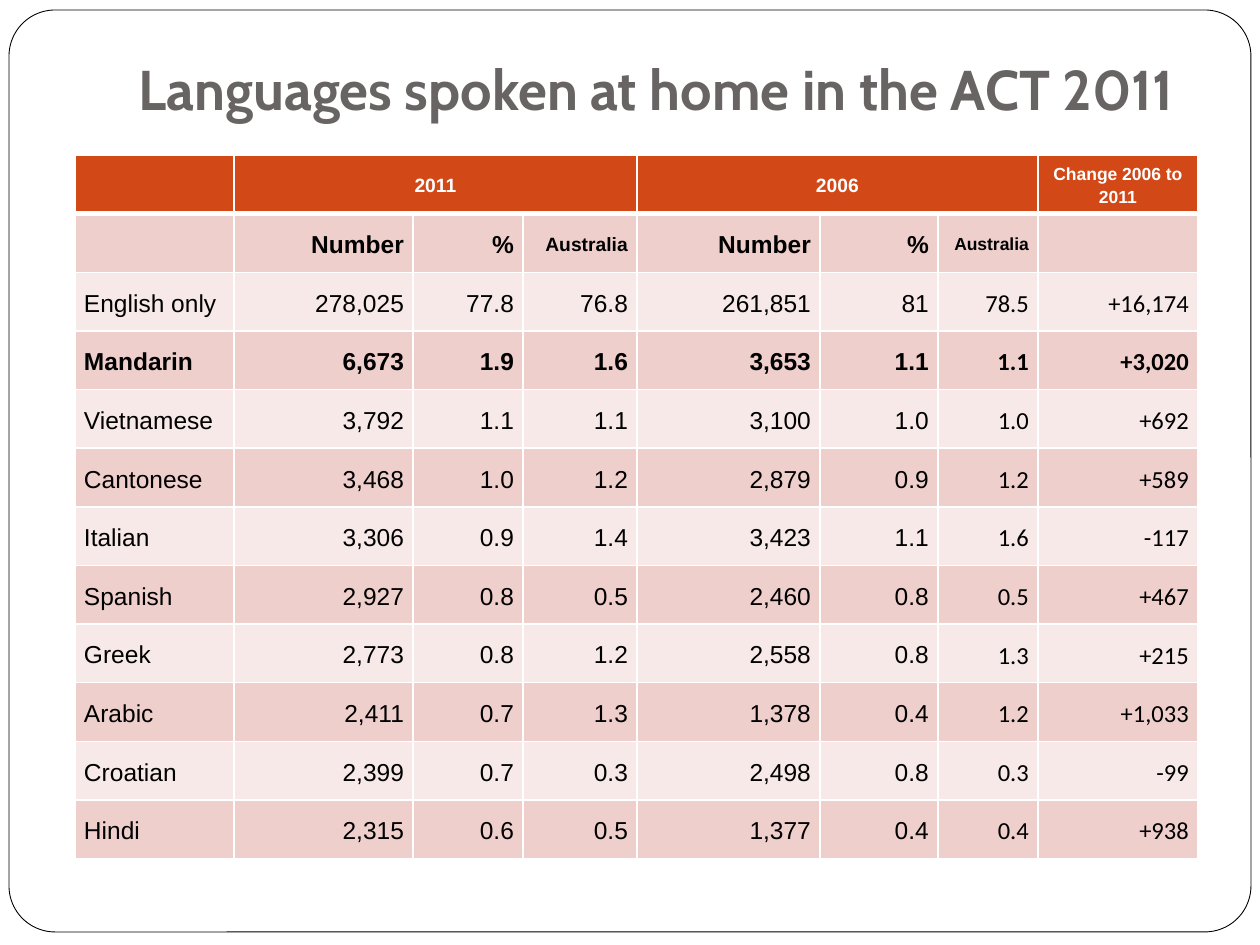
from typing import NamedTuple

from lxml.etree import SubElement
from pptx import Presentation
from pptx.dml.color import RGBColor
from pptx.enum.shapes import MSO_SHAPE as Shape
from pptx.enum.text import MSO_ANCHOR as Anchor, PP_ALIGN as Align
from pptx.oxml.ns import qn
from pptx.util import Emu, Pt

EMU_PER_PX = 914400 // 126

WHITE = RGBColor(0xFF, 0xFF, 0xFF)
BLACK = RGBColor(0x00, 0x00, 0x00)
TITLE_GREY = RGBColor(0x69, 0x64, 0x64)
HEADER_ORANGE = RGBColor(0xD3, 0x48, 0x17)
BAND_DARK = RGBColor(0xEF, 0xCF, 0xCC)
BAND_LIGHT = RGBColor(0xF7, 0xE9, 0xE8)

COLUMN_WIDTHS = (159, 179, 110, 114, 183, 118, 100, 160)
TABLE_HEIGHT = 704
HIGHLIGHTED = "Mandarin"


class Language(NamedTuple):
    name: str
    number_2011: str
    percent_2011: str
    australia_2011: str
    number_2006: str
    percent_2006: str
    australia_2006: str
    change: str


class CellStyle(NamedTuple):
    fill: RGBColor
    color: RGBColor = BLACK
    size: int = 14
    bold: bool = False
    font: str = "Arial"
    align: Align = Align.RIGHT
    top: int = 1
    bottom: int = 1


LANGUAGES = (
    Language("English only", "278,025", "77.8", "76.8", "261,851", "81", "78.5", "+16,174"),
    Language("Mandarin", "6,673", "1.9", "1.6", "3,653", "1.1", "1.1", "+3,020"),
    Language("Vietnamese", "3,792", "1.1", "1.1", "3,100", "1.0", "1.0", "+692"),
    Language("Cantonese", "3,468", "1.0", "1.2", "2,879", "0.9", "1.2", "+589"),
    Language("Italian", "3,306", "0.9", "1.4", "3,423", "1.1", "1.6", "-117"),
    Language("Spanish", "2,927", "0.8", "0.5", "2,460", "0.8", "0.5", "+467"),
    Language("Greek", "2,773", "0.8", "1.2", "2,558", "0.8", "1.3", "+215"),
    Language("Arabic", "2,411", "0.7", "1.3", "1,378", "0.4", "1.2", "+1,033"),
    Language("Croatian", "2,399", "0.7", "0.3", "2,498", "0.8", "0.3", "-99"),
    Language("Hindi", "2,315", "0.6", "0.5", "1,377", "0.4", "0.4", "+938"),
)
# Text and size of each heading cell
PERIODS = (("", 11), ("2011", 11), ("", 11), ("", 11), ("2006", 11), ("", 11), ("", 11),
           ("Change 2006 to 2011", 10))
MEASURES = (("", 14), ("Number", 14), ("%", 14), ("Australia", 11),
            ("Number", 14), ("%", 14), ("Australia", 10), ("", 14))


def px(length: int) -> Emu:
    return Emu(length * EMU_PER_PX)


def add_border(cell, side: str, points: int) -> None:
    line = SubElement(cell._tc.get_or_add_tcPr(), qn(f"a:ln{side}"), w=str(Pt(points)))
    fill = SubElement(line, qn("a:solidFill"))
    SubElement(fill, qn("a:srgbClr"), val=str(WHITE))


def fill_cell(cell, text: str, style: CellStyle) -> None:
    for side, points in (("L", 1), ("R", 1), ("T", style.top), ("B", style.bottom)):
        add_border(cell, side, points)
    cell.fill.solid()
    cell.fill.fore_color.rgb = style.fill
    cell.margin_left = cell.margin_right = px(9)
    cell.margin_top = cell.margin_bottom = 0
    cell.vertical_anchor = Anchor.MIDDLE
    if not text:
        return
    cell.text = text
    paragraph = cell.text_frame.paragraphs[0]
    paragraph.alignment = style.align
    paragraph.line_spacing = 1.15
    font = paragraph.font
    font.name, font.size, font.bold = style.font, Pt(style.size), style.bold
    font.color.rgb = style.color


def add_frame(slide) -> None:
    frame = slide.shapes.add_shape(Shape.ROUNDED_RECTANGLE, px(9), px(10), px(1242), px(922))
    frame.adjustments[0] = 0.05
    frame.shadow.inherit = False
    frame.fill.solid()
    frame.fill.fore_color.rgb = WHITE
    frame.line.color.rgb = BLACK
    frame.line.width = Pt(0.5)


def add_title(slide) -> None:
    title = slide.shapes.add_textbox(px(126), px(38), px(1071), px(97)).text_frame
    title.word_wrap = True
    title.vertical_anchor = Anchor.BOTTOM
    title.margin_bottom = px(13)
    paragraph = title.paragraphs[0]
    paragraph.text = "Languages spoken at home in the ACT 2011"
    font = paragraph.font
    font.name, font.size, font.bold = "Cabin", Pt(32), True
    font.color.rgb = TITLE_GREY


def add_language_table(slide) -> None:
    row_count = len(LANGUAGES) + 2
    table = slide.shapes.add_table(row_count, len(COLUMN_WIDTHS), px(75), px(155),
                                   px(sum(COLUMN_WIDTHS)), px(TABLE_HEIGHT)).table
    for column, width in zip(table.columns, COLUMN_WIDTHS):
        column.width = px(width)
    for row in table.rows:
        row.height = Emu(px(TABLE_HEIGHT) // row_count)

    # Heading rows
    for column, (text, size) in enumerate(PERIODS):
        style = CellStyle(HEADER_ORANGE, WHITE, size, True, align=Align.CENTER, bottom=3)
        fill_cell(table.cell(0, column), text, style)
    for first in (1, 4):
        table.cell(0, first).merge(table.cell(0, first + 2))
    for column, (text, size) in enumerate(MEASURES):
        fill_cell(table.cell(1, column), text, CellStyle(BAND_DARK, size=size, bold=True, top=3))

    # Language rows, in alternating bands
    for row, language in enumerate(LANGUAGES, start=2):
        for column, text in enumerate(language):
            style = CellStyle(
                fill=BAND_DARK if row % 2 else BAND_LIGHT,
                bold=language.name == HIGHLIGHTED,
                font="Calibri" if column >= 6 else "Arial",
                align=Align.RIGHT if column else Align.LEFT,
            )
            fill_cell(table.cell(row, column), text, style)


def main() -> None:
    deck = Presentation()
    deck.slide_width, deck.slide_height = px(1260), px(945)
    slide = deck.slides.add_slide(deck.slide_layouts[6])
    add_frame(slide)
    add_title(slide)
    add_language_table(slide)
    deck.save("out.pptx")


if __name__ == "__main__":
    main()
